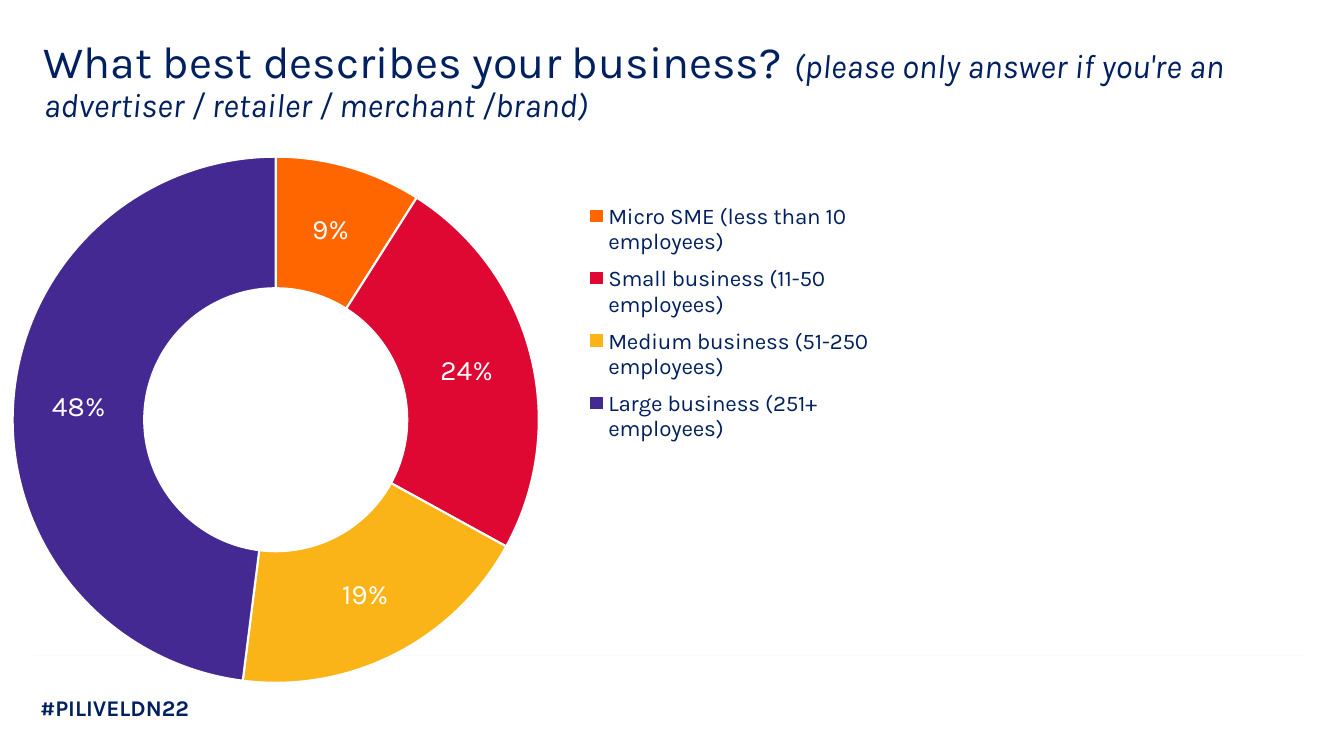
from lxml import etree
from pptx import Presentation
from pptx.chart.data import CategoryChartData
from pptx.dml.color import RGBColor
from pptx.enum.chart import XL_CHART_TYPE as ChartType, XL_LEGEND_POSITION as LegendPosition
from pptx.enum.shapes import MSO_CONNECTOR as Connector
from pptx.enum.text import MSO_ANCHOR as Anchor
from pptx.oxml.ns import qn
from pptx.util import Pt

COLORS = {"navy": "002060", "rule": "D3D4D6", "white": "FFFFFF", "text": "23282C"}
FONT = "Karla"
BUSINESS_SIZES = [
    ("Micro SME (less than 10 employees)", 0.09, "FF6600"),
    ("Small business (11-50 employees)", 0.24, "DE0833"),
    ("Medium business (51-250 employees)", 0.19, "FAB418"),
    ("Large business (251+ employees)", 0.48, "442993"),
]


def rgb(name):
    return RGBColor.from_string(COLORS[name])


def set_font(font, size, color, name=FONT):
    font.name = name
    font.size = Pt(size)
    font.color.rgb = rgb(color)


def add_text(slide, left, top, width, height):
    frame = slide.shapes.add_textbox(Pt(left), Pt(top), Pt(width), Pt(height)).text_frame
    frame.word_wrap = True
    frame.vertical_anchor = Anchor.TOP
    return frame.paragraphs[0]


def add_title(slide):
    paragraph = add_text(slide, 24, 25, 898, 41)
    paragraph.line_spacing = 0.9
    question = paragraph.add_run()
    question.text = "What best describes your business?\u00a0"
    set_font(question.font, 32, "navy")
    condition = paragraph.add_run()
    condition.text = "(please only answer if you're an advertiser / retailer / merchant /brand)"
    set_font(condition.font, 24, "navy")
    condition.font.italic = True


def add_hashtag(slide):
    paragraph = add_text(slide, 21.6, 492.5, 257.8, 26.6)
    paragraph.text = "#PILIVELDN22"
    set_font(paragraph.font, 16, "navy")
    paragraph.font.bold = True


def add_footer_rule(slide):
    rule = slide.shapes.add_connector(Connector.STRAIGHT, Pt(24), Pt(468), Pt(933), Pt(468))
    rule.line.width = Pt(0.25)
    rule.line.color.rgb = rgb("rule")
    color = rule._element.spPr.find(".//" + qn("a:srgbClr"))
    etree.SubElement(color, qn("a:alpha")).set("val", "20000")
    etree.SubElement(rule._element.spPr, qn("a:effectLst"))


def set_layout(parent, index, left, top, width, height, inner=False):
    for old_layout in parent.findall(qn("c:layout")):
        parent.remove(old_layout)
    layout = etree.Element(qn("c:layout"))
    manual = etree.SubElement(layout, qn("c:manualLayout"))
    settings = [("layoutTarget", "inner")] if inner else []
    settings += [("xMode", "edge"), ("yMode", "edge")]
    settings += [("x", left), ("y", top), ("w", width), ("h", height)]
    for tag, value in settings:
        etree.SubElement(manual, qn(f"c:{tag}")).set("val", str(value))
    parent.insert(index, layout)


def add_doughnut(slide):
    data = CategoryChartData(number_format="0%")
    data.categories = [label for label, _, _ in BUSINESS_SIZES]
    data.add_series("Series 1", [share for _, share, _ in BUSINESS_SIZES])
    chart = slide.shapes.add_chart(
        ChartType.DOUGHNUT, Pt(-39), Pt(102), Pt(687), Pt(397), data
    ).chart
    chart.has_title = False
    set_font(chart.font, 10, "text", "Calibri")

    chart.has_legend = True
    legend = chart.legend
    legend.position = LegendPosition.RIGHT
    legend.include_in_layout = False
    set_font(legend.font, 16, "navy")
    set_layout(legend._element, 1, 0.66, 0.09, 0.31, 0.47)

    plot = chart.plots[0]
    plot.vary_by_categories = True
    set_layout(plot._element.getparent(), 0, 0.07, 0.025, 0.547, 0.947, inner=True)
    for index, (_, _, color) in enumerate(BUSINESS_SIZES):
        slice_format = plot.series[0].points[index].format
        slice_format.fill.solid()
        slice_format.fill.fore_color.rgb = RGBColor.from_string(color)
        slice_format.line.color.rgb = rgb("white")
        slice_format.line.width = Pt(1.5)

    labels = plot.series[0].data_labels
    labels.show_value = True
    labels.show_percentage = False
    labels.number_format = "0%"
    labels.number_format_is_linked = False
    set_font(labels.font, 20, "white")


def main():
    presentation = Presentation()
    presentation.slide_width = Pt(960)
    presentation.slide_height = Pt(540)
    slide = presentation.slides.add_slide(presentation.slide_layouts[6])
    add_footer_rule(slide)
    add_hashtag(slide)
    add_title(slide)
    add_doughnut(slide)
    presentation.save("out.pptx")


if __name__ == "__main__":
    main()
